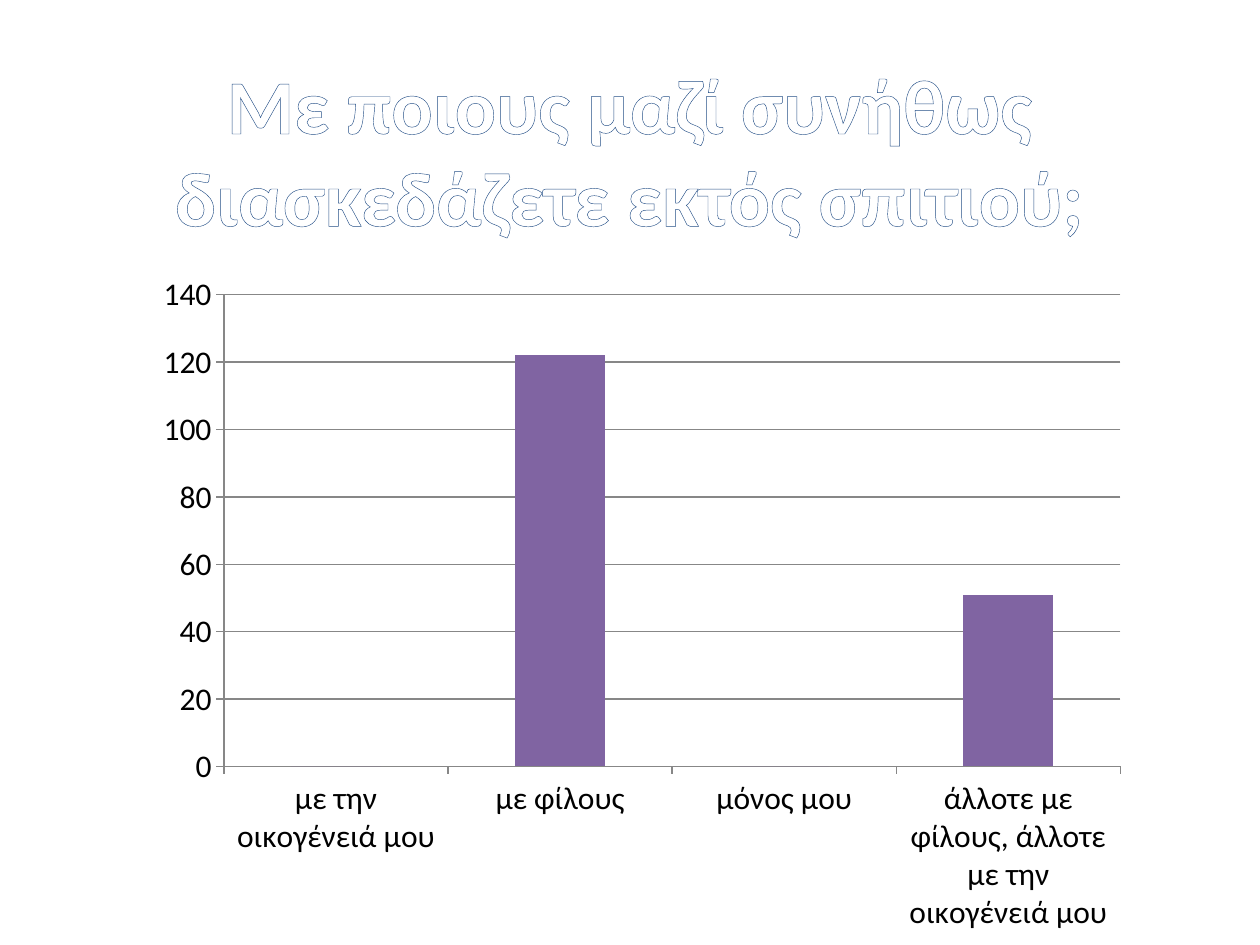
from dataclasses import dataclass

from lxml import etree
from pptx import Presentation
from pptx import util as u
from pptx.chart import data as cd
from pptx.dml.color import RGBColor
from pptx.enum import chart as ch
from pptx.enum import text as tx
from pptx.oxml import ns


@dataclass
class Theme:
    font: str = "Calibri"
    head: int = 44
    label: int = 18
    white: str = "FFFFFF"
    ink: str = "000000"
    bar: str = "8064A2"
    rule: str = "878787"
    edge: tuple = ((0, "7EA6EA"), (75, "244F87"), (100, "1F4477"))
    stroke: float = 2.48


class Deck:
    def __init__(self, theme):
        self.theme = theme
        self.pres = Presentation()
        self.pres.slide_width = u.Inches(10)
        self.pres.slide_height = u.Inches(7.5)
        self.slide = self.pres.slides.add_slide(self.pres.slide_layouts[6])

    def style(self, font, size, color, bold=False):
        font.name = self.theme.font
        font.size = u.Pt(size)
        font.bold = bold
        font.color.rgb = RGBColor.from_string(color)

    def outline(self, run):
        line = etree.Element(ns.qn("a:ln"), w=str(u.Pt(self.theme.stroke)))
        grad = etree.SubElement(line, ns.qn("a:gradFill"))
        stops = etree.SubElement(grad, ns.qn("a:gsLst"))
        for percent, color in self.theme.edge:
            stop = etree.SubElement(stops, ns.qn("a:gs"), pos=str(percent * 1000))
            etree.SubElement(stop, ns.qn("a:srgbClr"), val=color)
        etree.SubElement(grad, ns.qn("a:lin"), ang="5400000")
        run._r.get_or_add_rPr().insert(0, line)

    def title(self, words, box):
        frame = self.slide.shapes.add_textbox(*map(u.Inches, box)).text_frame
        frame.word_wrap = True
        frame.vertical_anchor = tx.MSO_ANCHOR.MIDDLE
        frame.text = words
        para = frame.paragraphs[0]
        para.alignment = tx.PP_ALIGN.CENTER
        run = para.runs[0]
        self.style(run.font, self.theme.head, self.theme.white, bold=True)
        self.outline(run)

    def columns(self, name, counts, box):
        data = cd.CategoryChartData()
        data.categories = list(counts)
        data.add_series(name, list(counts.values()))
        kind = ch.XL_CHART_TYPE.COLUMN_CLUSTERED
        frame = self.slide.shapes.add_chart(kind, *map(u.Inches, box), data)
        chart = frame.chart
        chart.has_legend = False
        chart.has_title = False
        self.style(chart.font, self.theme.label, self.theme.ink)

        plot = chart.plots[0]
        plot.gap_width = 150
        plot.vary_by_categories = False
        fill = plot.series[0].format.fill
        fill.solid()
        fill.fore_color.rgb = RGBColor.from_string(self.theme.bar)

        scale = chart.value_axis
        scale.minimum_scale = 0
        scale.maximum_scale = 140
        scale.major_unit = 20
        for axis in (chart.category_axis, scale):
            axis.major_tick_mark = ch.XL_TICK_MARK.OUTSIDE
        for part in (chart.category_axis, scale, scale.major_gridlines):
            part.format.line.color.rgb = RGBColor.from_string(self.theme.rule)


def main():
    deck = Deck(Theme())
    question = "Με ποιους μαζί συνήθως διασκεδάζετε εκτός σπιτιού;"
    deck.title(question, (0.5, 0.29, 9, 1.79))
    counts = {
        "με την οικογένειά μου": 0,
        "με φίλους": 122,
        "μόνος μου": 0,
        "άλλοτε με φίλους, άλλοτε με την οικογένειά μου": 51,
    }
    deck.columns("Series 1", counts, (1.14, 2.08, 7.91, 5.42))
    deck.pres.save("out.pptx")


if __name__ == "__main__":
    main()
